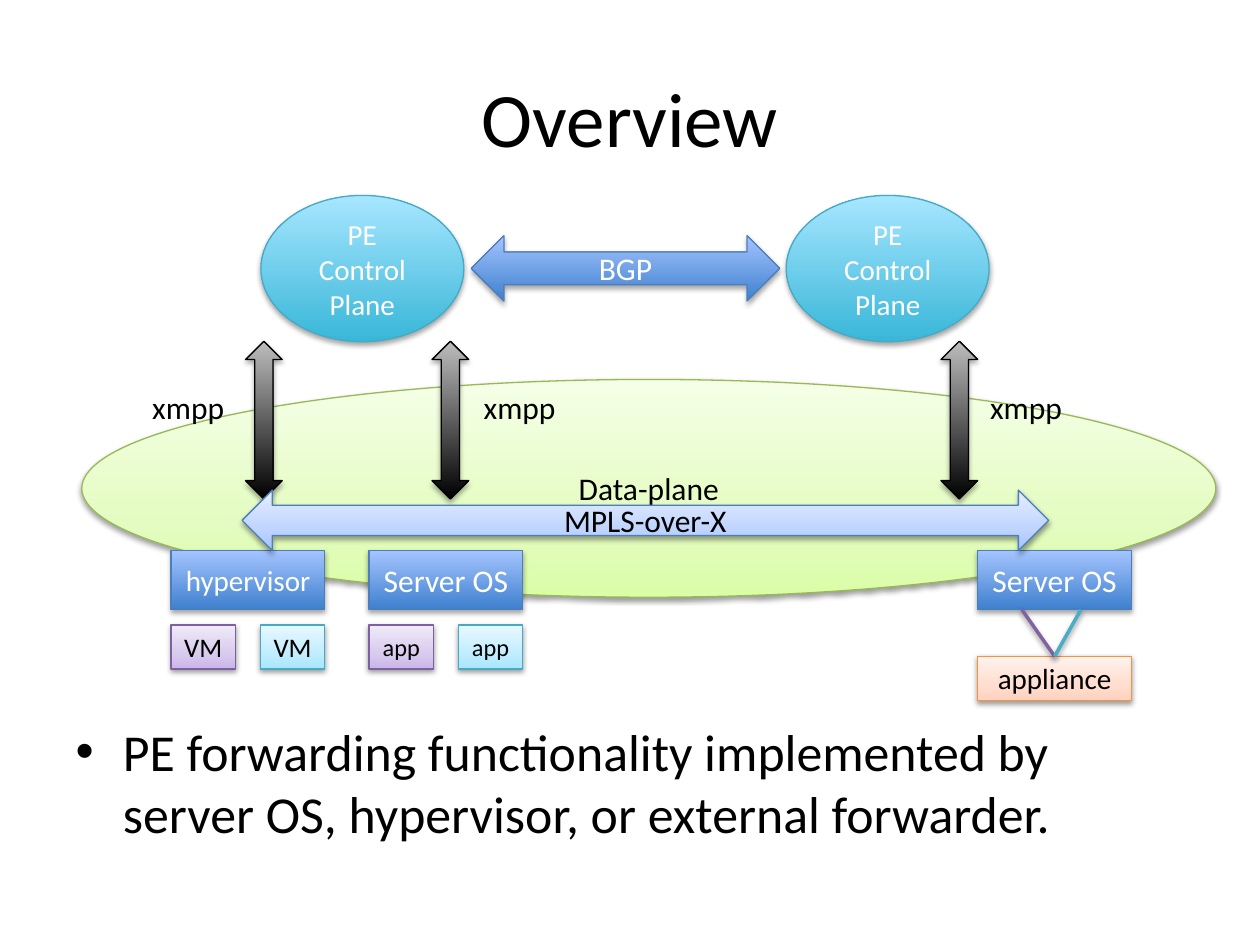
from copy import deepcopy

from lxml.etree import SubElement
from pptx import Presentation
from pptx.dml.color import RGBColor
from pptx.enum.shapes import MSO_CONNECTOR, MSO_SHAPE
from pptx.enum.text import MSO_ANCHOR, MSO_AUTO_SIZE, PP_ALIGN
from pptx.oxml.ns import qn
from pptx.util import Cm, Pt

BLACK = RGBColor(0x00, 0x00, 0x00)
WHITE = RGBColor(0xFF, 0xFF, 0xFF)
SILVER = RGBColor(0xBD, 0xBD, 0xBD)
BLUE_LINE = RGBColor(0x4B, 0x7E, 0xBC)
BLUE = RGBColor(0x3F, 0x80, 0xCE)
LIGHT_BLUE = RGBColor(0xA4, 0xC4, 0xFF)
AQUA_LINE = RGBColor(0x46, 0xAA, 0xC5)
AQUA = RGBColor(0x39, 0xB7, 0xD8)
LIGHT_AQUA = RGBColor(0xA7, 0xE6, 0xFF)
PURPLE_LINK = RGBColor(0x80, 0x64, 0xA2)
AQUA_LINK = RGBColor(0x4B, 0xAC, 0xC6)

STRONG_BLUE = {"line": BLUE_LINE, "stops": (BLUE, LIGHT_BLUE), "text": WHITE}
STRONG_AQUA = {"line": AQUA_LINE, "stops": (AQUA, LIGHT_AQUA), "text": WHITE}
STRONG_BLACK = {"line": BLACK, "stops": (BLACK, SILVER), "text": WHITE}
PALE_BLUE = {
    "line": BLUE_LINE, "text": BLACK,
    "stops": (LIGHT_BLUE, RGBColor(0xBF, 0xD4, 0xFF), RGBColor(0xE6, 0xEE, 0xFF)),
}
PALE_AQUA = {
    "line": AQUA_LINE, "text": BLACK,
    "stops": (LIGHT_AQUA, RGBColor(0xC1, 0xED, 0xFF), RGBColor(0xE7, 0xF8, 0xFF)),
}
PALE_PURPLE = {
    "line": RGBColor(0x7D, 0x60, 0xA0), "text": BLACK,
    "stops": (RGBColor(0xC9, 0xB5, 0xE8), RGBColor(0xD8, 0xCB, 0xEE), RGBColor(0xF0, 0xEA, 0xF9)),
}
PALE_GREEN = {
    "line": RGBColor(0x98, 0xB9, 0x55), "text": BLACK,
    "stops": (RGBColor(0xDA, 0xFD, 0xA7), RGBColor(0xE4, 0xFC, 0xC2), RGBColor(0xF5, 0xFF, 0xE7)),
}
PALE_ORANGE = {
    "line": RGBColor(0xF6, 0x92, 0x40), "text": BLACK,
    "stops": (RGBColor(0xFF, 0xD2, 0xBD), RGBColor(0xFF, 0xDE, 0xD0), RGBColor(0xFF, 0xF2, 0xED)),
}

HOST_WIDTH, HOST_HEIGHT = 3.1, 1.19
GUEST_WIDTH, GUEST_HEIGHT = 1.3, 0.89


def apply(target, values):
    for name, value in values.items():
        setattr(target, name, value)


def place(shape, box):
    apply(shape, dict(zip(("left", "top", "width", "height"), map(Cm, box))))


def write(shape, text, size, color, alignment):
    paragraph = shape.text_frame.paragraphs[0]
    paragraph.alignment = alignment
    run = paragraph.add_run()
    run.text = text
    apply(run.font, {"name": "Calibri", "size": Pt(size)})
    run.font.color.rgb = color


def add_shadow(effects, distance, opacity):
    shadow = SubElement(effects, qn("a:outerShdw"), {
        "blurRad": str(Pt(3.1)), "dist": str(Pt(distance)),
        "dir": "5400000", "rotWithShape": "0",
    })
    color = SubElement(shadow, qn("a:srgbClr"), val=str(BLACK))
    SubElement(color, qn("a:alpha"), val=str(opacity * 1000))


def fill_gradient(shape, colors):
    shape.fill.gradient()
    shape.fill.gradient_angle = 90
    positions = (0, 1)
    if len(colors) == 3:
        positions = (0, 0.35, 1)
        first = next(shape._element.iter(qn("a:gs")))
        first.addnext(deepcopy(first))
    for stop, position, color in zip(shape.fill.gradient_stops, positions, colors):
        stop.position = position
        stop.color.rgb = color


def add_block(slide, kind, box, style, text="", size=18, margin=0.25):
    shape = slide.shapes.add_shape(kind, *map(Cm, box))
    fill_gradient(shape, style["stops"])
    shape.line.color.rgb = style["line"]
    shape.line.width = Pt(0.75)
    shape.shadow.inherit = False
    effects = shape._element.spPr.find(qn("a:effectLst"))
    add_shadow(effects, *((1.8, 35) if len(style["stops"]) == 2 else (1.6, 38)))
    if text:
        apply(shape.text_frame, {
            "word_wrap": True, "vertical_anchor": MSO_ANCHOR.MIDDLE,
            "margin_left": Cm(margin), "margin_right": Cm(margin),
        })
        write(shape, text, size, style["text"], PP_ALIGN.CENTER)
    return shape


def add_title(slide, box):
    title = slide.shapes.title
    place(title, box)
    title.text_frame.vertical_anchor = MSO_ANCHOR.MIDDLE
    write(title, "Overview", 44, BLACK, PP_ALIGN.CENTER)


def add_summary(slide, box):
    body = slide.placeholders[1]
    place(body, box)
    body.text_frame.auto_size = MSO_AUTO_SIZE.NONE
    write(body, "PE forwarding functionality implemented by server OS, "
          "hypervisor, or external forwarder.", 29.6, BLACK, PP_ALIGN.LEFT)


def add_host(slide, left, top, label, size=18):
    box = (left, top, HOST_WIDTH, HOST_HEIGHT)
    add_block(slide, MSO_SHAPE.RECTANGLE, box, STRONG_BLUE, label, size, margin=0.1)


def add_guest_host(slide, left, top, label, size, guest, guest_size):
    add_host(slide, left, top, label, size)
    offsets = (0, HOST_WIDTH - GUEST_WIDTH)
    for offset, style in zip(offsets, (PALE_PURPLE, PALE_AQUA)):
        box = (left + offset, top + 1.5, GUEST_WIDTH, GUEST_HEIGHT)
        add_block(slide, MSO_SHAPE.RECTANGLE, box, style, guest, guest_size, margin=0.1)


def add_appliance_host(slide, left, top):
    add_host(slide, left, top, "Server OS")
    box = (left, top + 2.13, HOST_WIDTH, GUEST_HEIGHT)
    appliance = add_block(slide, MSO_SHAPE.RECTANGLE, box, PALE_ORANGE, "appliance", 16.6)
    for offset, color in ((0.89, PURPLE_LINK), (2.08, AQUA_LINK)):
        link = slide.shapes.add_connector(
            MSO_CONNECTOR.STRAIGHT, Cm(left + HOST_WIDTH / 2), Cm(top + 2.13),
            Cm(left + offset), Cm(top + HOST_HEIGHT))
        link.begin_connect(appliance, 0)
        link.line.color.rgb = color
        link.line.width = Pt(2)
        add_shadow(SubElement(link._element.spPr, qn("a:effectLst")), 1.6, 38)


def add_control_plane(slide, left, top):
    for offset in (0, 10.59):
        add_block(slide, MSO_SHAPE.OVAL, (left + offset, top, 4.09, 2.95),
                  STRONG_AQUA, "PE Control Plane", 16.6)
    add_block(slide, MSO_SHAPE.LEFT_RIGHT_ARROW, (left + 4.24, top + 0.81, 6.22, 1.32),
              STRONG_BLUE, "BGP")


def add_session(slide, left, top, label_offset):
    add_block(slide, MSO_SHAPE.UP_DOWN_ARROW, (left, top, 0.74, 3.18), STRONG_BLACK)
    label = slide.shapes.add_textbox(
        Cm(left + label_offset), Cm(top + 0.82), Cm(2.08), Cm(1.02))
    apply(label.text_frame, {"word_wrap": False, "auto_size": MSO_AUTO_SIZE.SHAPE_TO_FIT_TEXT})
    write(label, "xmpp", 18, BLACK, PP_ALIGN.LEFT)


def main():
    presentation = Presentation()
    apply(presentation, {"slide_width": Cm(25.4), "slide_height": Cm(19.05)})
    slide = presentation.slides.add_slide(presentation.slide_layouts[1])
    add_title(slide, (1.27, 0.76, 22.86, 3.18))
    add_summary(slide, (1.27, 14.38, 22.86, 2.64))
    add_block(slide, MSO_SHAPE.OVAL, (1.65, 7.65, 22.86, 4.39), PALE_GREEN, "Data-plane")
    add_guest_host(slide, 7.44, 11.1, "Server OS", 18, "app", 13.9)
    add_appliance_host(slide, 19.71, 11.1)
    add_guest_host(slide, 3.45, 11.1, "hypervisor", 16.6, "VM", 15.3)
    add_control_plane(slide, 5.26, 3.94)
    for left, label_offset in ((4.95, -2.13), (8.71, 0.79), (18.97, 0.74)):
        add_session(slide, left, 6.88, label_offset)
    add_block(slide, MSO_SHAPE.LEFT_RIGHT_ARROW, (4.88, 9.88, 16.26, 1.22),
              PALE_BLUE, "MPLS-over-X")
    presentation.save("out.pptx")


if __name__ == "__main__":
    main()
